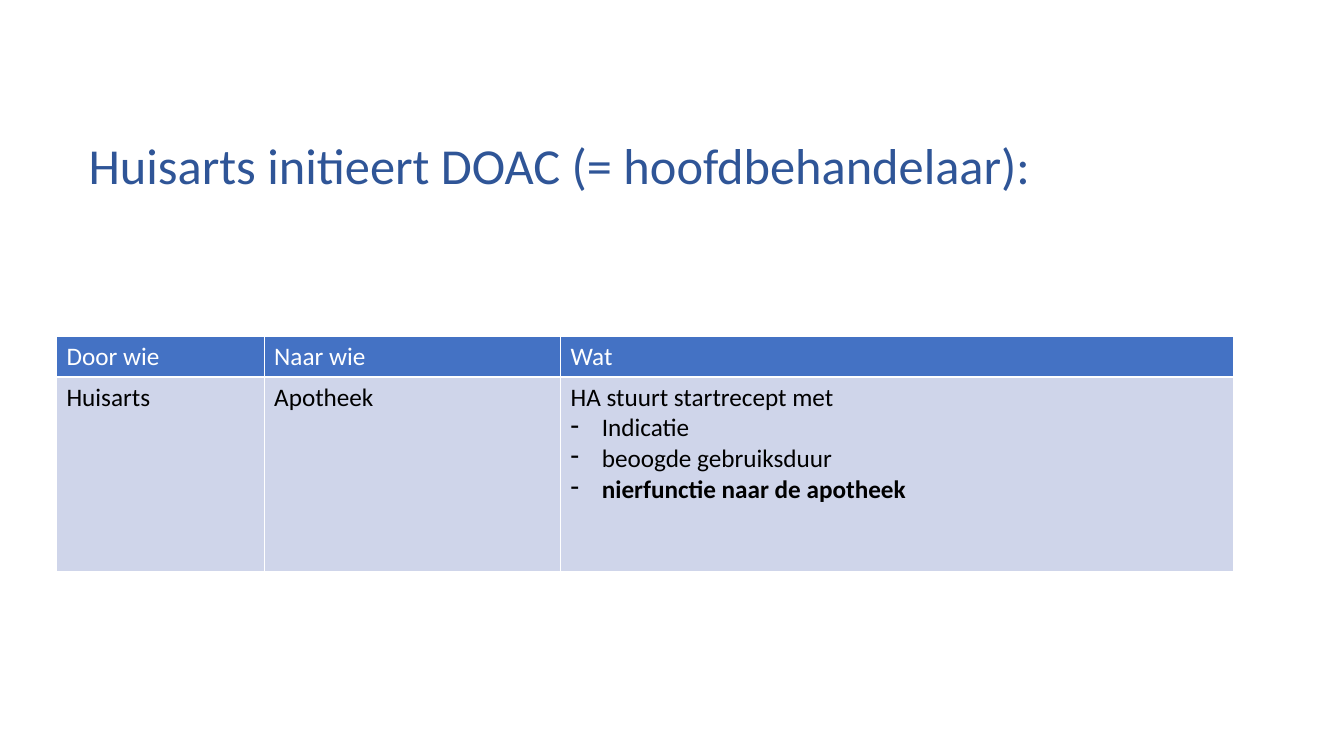
import pptx
import pptx.dml.color
import pptx.oxml
import pptx.oxml.ns
import pptx.util
from pptx.util import Inches

FONT = "Calibri"
COLORS = {
    "title": "2F5597",
    "header": "4472C4",
    "body": "CFD5EA",
    "light": "FFFFFF",
    "dark": "000000",
}
HEADINGS = ["Door wie", "Naar wie", "Wat"]
MESSAGE = ["Huisarts", "Apotheek", "HA stuurt startrecept met"]
RECIPE_ITEMS = ["Indicatie", "beoogde gebruiksduur", "nierfunctie naar de apotheek"]


def rgb(name):
    return pptx.dml.color.RGBColor.from_string(COLORS[name])


def style(p, size, color, bold=False):
    p.font.name = FONT
    p.font.size = pptx.util.Pt(size)
    p.font.bold = bold
    p.font.color.rgb = rgb(color)


def set_borders(cell, color):
    tcPr = cell._tc.get_or_add_tcPr()
    for i, side in enumerate("LRTB"):
        tcPr.insert(i, pptx.oxml.parse_xml(
            f'<a:ln{side} {pptx.oxml.ns.nsdecls("a")} w="12700"><a:solidFill>'
            f'<a:srgbClr val="{COLORS[color]}"/></a:solidFill></a:ln{side}>'))


def add_dash(p):
    indent = Inches(0.31)
    pPr = p._p.get_or_add_pPr()
    pPr.set("marL", str(indent))
    pPr.set("indent", str(-indent))
    pPr.insert_element_before(
        pptx.oxml.parse_xml(f'<a:buChar {pptx.oxml.ns.nsdecls("a")} char="-"/>'),
        "a:tabLst", "a:defRPr", "a:extLst")


def add_title(s, left, top, width, height):
    tf = s.shapes.add_textbox(
        Inches(left), Inches(top), Inches(width), Inches(height)).text_frame
    tf.word_wrap = True
    p = tf.paragraphs[0]
    p.text = "Huisarts initieert DOAC (= hoofdbehandelaar):"
    style(p, 36, "title")


def add_message_table(s, left, top, width, height):
    table = s.shapes.add_table(
        2, 3, Inches(left), Inches(top), Inches(width), Inches(height)).table
    header_height = 0.4
    table.rows[0].height = Inches(header_height)
    table.rows[1].height = Inches(height - header_height)
    sender, receiver = 2.06, 2.94
    for col, w in zip(table.columns, [sender, receiver, width - sender - receiver]):
        col.width = Inches(w)

    # Header and body cells
    rows = [(HEADINGS, "header", "light"), (MESSAGE, "body", "dark")]
    for r, (texts, fill, color) in enumerate(rows):
        for c, text in enumerate(texts):
            cell = table.cell(r, c)
            cell.fill.solid()
            cell.fill.fore_color.rgb = rgb(fill)
            set_borders(cell, "light")
            p = cell.text_frame.paragraphs[0]
            p.text = text
            style(p, 18, color)

    # Dashed list in the last cell
    tf = table.cell(1, 2).text_frame
    for item in RECIPE_ITEMS:
        p = tf.add_paragraph()
        p.text = item
        style(p, 18, "dark", bold=item == RECIPE_ITEMS[-1])
        add_dash(p)


def main():
    prs = pptx.Presentation()
    prs.slide_width = Inches(13.33)
    prs.slide_height = Inches(7.5)
    s = prs.slides.add_slide(prs.slide_layouts[6])
    add_title(s, 0.78, 1.28, 10.08, 0.71)
    add_message_table(s, 0.56, 3.34, 11.68, 2.33)
    prs.save("out.pptx")


if __name__ == "__main__":
    main()
